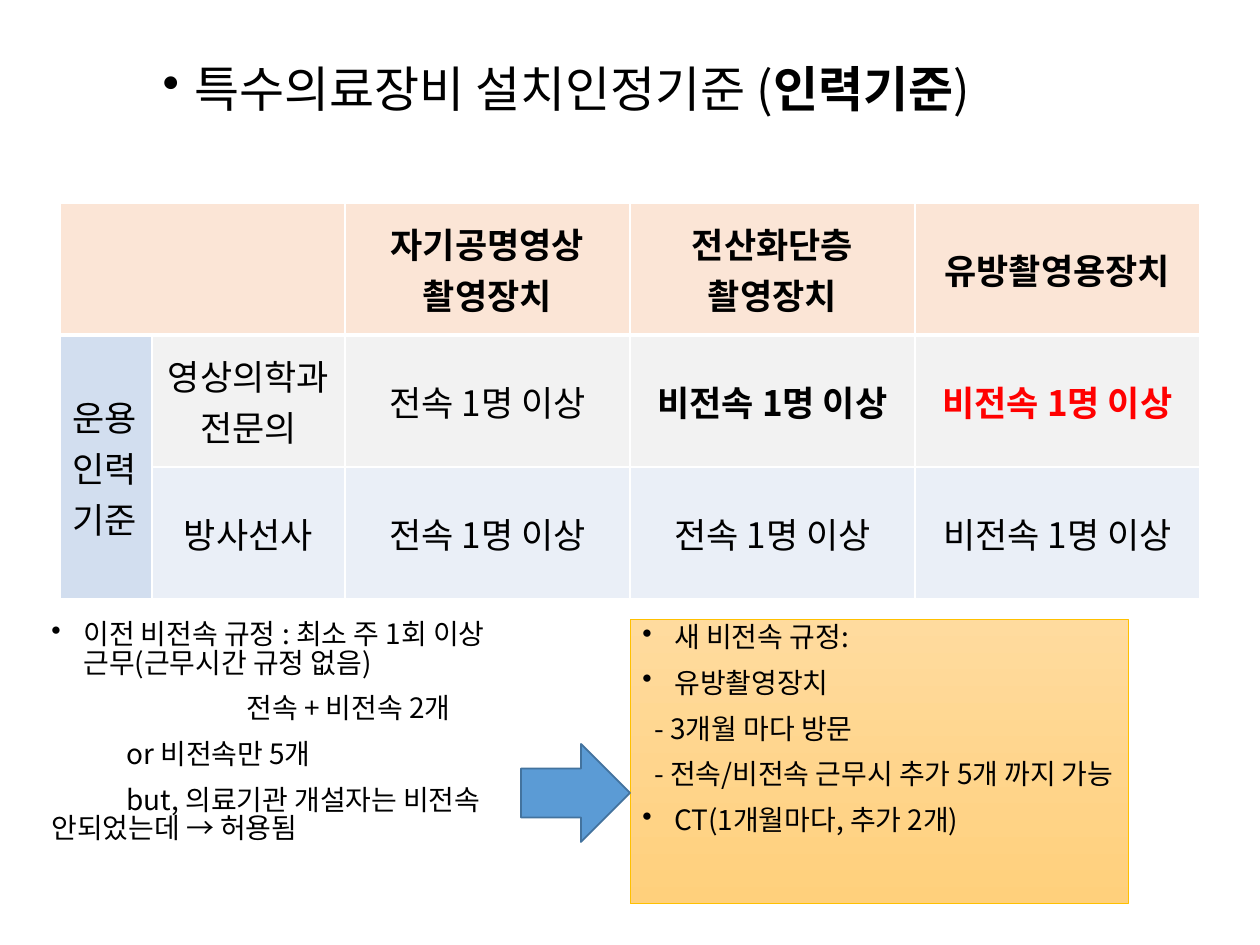
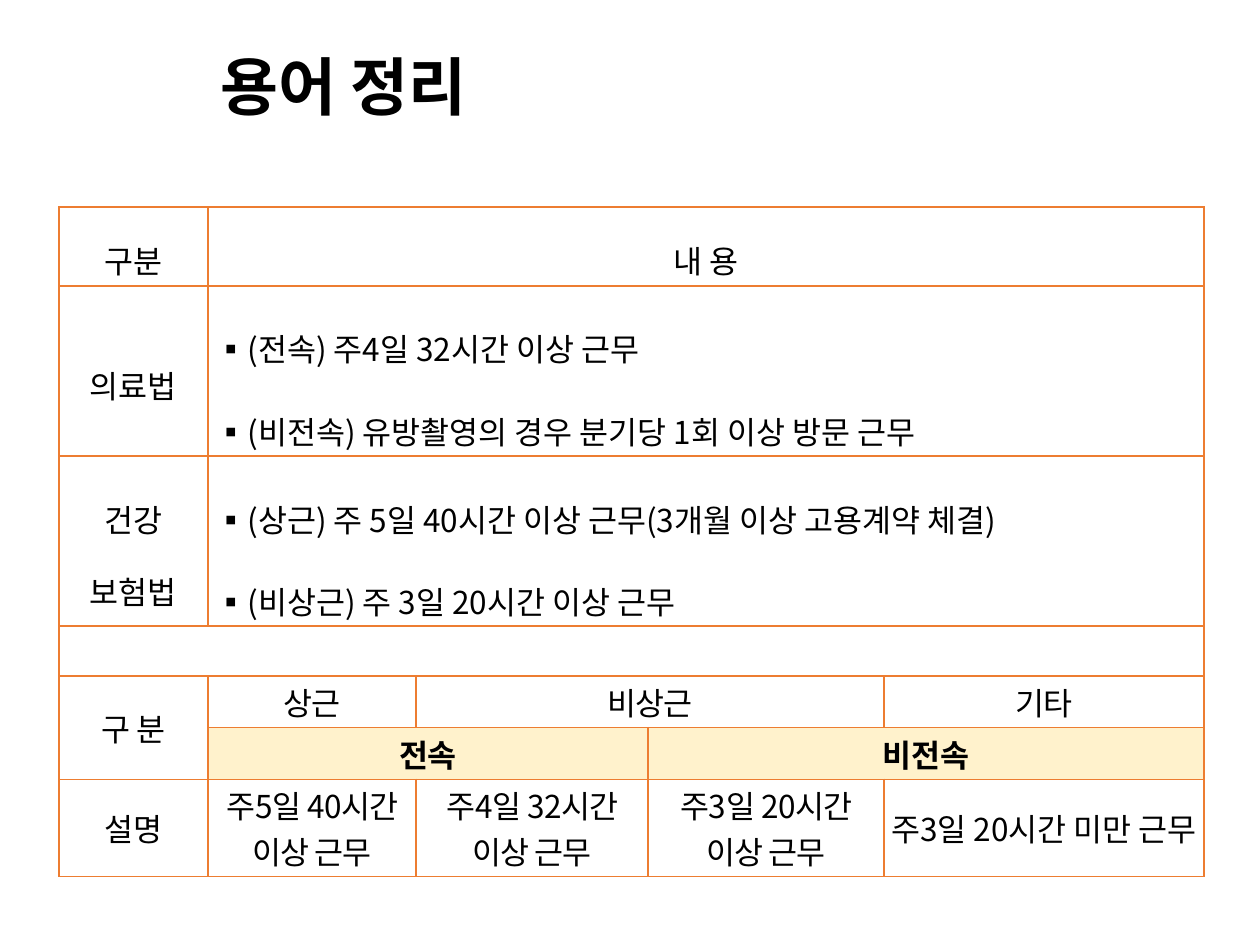
from pptx import Presentation
from pptx.dml.color import RGBColor as Rgb
from pptx.enum.shapes import MSO_SHAPE as Shape
from pptx.enum.text import MSO_ANCHOR as Anchor, PP_ALIGN as Align
from pptx.oxml.ns import qn
from pptx.util import Pt
from lxml.etree import SubElement as Sub

FONT = "Noto Sans CJK KR"
HEX = {
    "ink": "000000", "red": "FF0000", "white": "FFFFFF",
    "peach": "FBE5D6", "steel": "D2DEEF", "grey": "F2F2F2", "ice": "EAEFF7",
    "orange": "ED7D31", "cream": "FFF2CC", "gold": "FFC000",
    "light": "FFDB9E", "deep": "FFD07C", "blue": "5B9BD5", "navy": "43739E",
}
FACE = {"size": 18, "bold": False, "color": "ink", "track": 0}
PARA = {"alignment": Align.LEFT, "line_spacing": 1.0}


def px(n):
    return round(n * 914400 / 126)


def rgb(name):
    return Rgb.from_string(HEX[name])


def put(obj, vals):
    for key, val in vals.items():
        setattr(obj, key, val)


def place(obj, box):
    put(obj, dict(zip(("left", "top", "width", "height"), map(px, box))))


def add_run(para, text, face):
    face = {**FACE, **face}
    run = para.add_run()
    run.text = text
    put(run.font, {"name": FONT, "size": Pt(face["size"]), "bold": face["bold"]})
    run.font.color.rgb = rgb(face["color"])
    props = run.font._element
    Sub(props, qn("a:ea")).set("typeface", FONT)
    if face["track"]:
        props.set("spc", str(face["track"]))


def indent(para, left, first, mark=None):
    props = para._p.get_or_add_pPr()
    props.set("marL", str(px(left)))
    props.set("indent", str(px(first)))
    if mark:
        Sub(props, qn("a:buChar")).set("char", mark)


def write(frame, lines, face, fmt=None, gap=0):
    for i, (text, lead) in enumerate(lines):
        para = frame.paragraphs[0] if i == 0 else frame.add_paragraph()
        if lead == "•":
            indent(para, 32, -32, lead)
        elif lead:
            indent(para, 0, lead)
        put(para, {**PARA, **(fmt or {})})
        if i and gap:
            para.space_before = Pt(gap)
        parts = [(text, {})] if isinstance(text, str) else text
        for part, more in parts:
            add_run(para, part, {**face, **more})


def add_title(slide, box, text, face, lead=None):
    title = slide.shapes.title
    place(title, box)
    put(title.text_frame, {"vertical_anchor": Anchor.MIDDLE, "word_wrap": True})
    write(title.text_frame, [(text, lead)], face, {"line_spacing": 0.9})


def add_grid(slide, left, top, cols, rows):
    box = map(px, (left, top, sum(cols), sum(rows)))
    table = slide.shapes.add_table(len(rows), len(cols), *box).table
    put(table, {"first_row": False, "horz_banding": False})
    for col, wide in zip(table.columns, cols):
        col.width = px(wide)
    for row, high in zip(table.rows, rows):
        row.height = px(high)
    return table


def edge(cell, color, wide):
    props = cell._tc.get_or_add_tcPr()
    for side, pts in zip("LRTB", wide):
        line = Sub(props, qn("a:ln" + side), w=str(Pt(pts)))
        Sub(Sub(line, qn("a:solidFill")), qn("a:srgbClr")).set("val", HEX[color])


def paint(cell, name):
    if name:
        cell.fill.solid()
        cell.fill.fore_color.rgb = rgb(name)
    else:
        cell.fill.background()


def pad(cell, wide, high):
    put(cell, {"margin_left": px(wide), "margin_right": px(wide),
               "margin_top": px(high), "margin_bottom": px(high)})


def fill_cell(cell, text, face, fmt):
    cell.vertical_anchor = Anchor.MIDDLE
    if text:
        write(cell.text_frame, [(line, None) for line in text.split("\n")], face, fmt)


def add_staff(slide, left, top):
    full, part = "전속 1명 이상", "비전속 1명 이상"
    words = [
        ["", "", "자기공명영상\n촬영장치", "전산화단층\n촬영장치", "유방촬영용장치"],
        ["운용인력기준", "영상의학과전문의", full, part, part],
        ["", "방사선사", full, full, part],
    ]
    marks = {(1, 3): {"bold": True}, (1, 4): {"bold": True, "color": "red"}}
    table = add_grid(slide, left, top, [92, 193] + [285] * 3, [132] * 3)
    for r, (row, tint) in enumerate(zip(words, ("peach", "grey", "ice"))):
        for c, text in enumerate(row):
            cell = table.cell(r, c)
            side = r and c == 0
            edge(cell, "white", (1, 1, 3 if r == 1 else 1, 1 if r else 3))
            paint(cell, "steel" if side else tint)
            face = {"size": 20, "bold": r == 0, **marks.get((r, c), {})}
            fill_cell(cell, text, face, {"alignment": Align.LEFT if side else Align.CENTER})
    table.cell(0, 0).merge(table.cell(0, 1))
    table.cell(1, 0).merge(table.cell(2, 0))


def add_note(shape, lines):
    put(shape.text_frame, {"word_wrap": True, "vertical_anchor": Anchor.TOP})
    write(shape.text_frame, lines, {"size": 16}, {"line_spacing": 0.84}, 10)


def add_rules(slide, left, top):
    old = slide.shapes.add_textbox(*map(px, (left, top, 498, 268)))
    add_note(old, [
        ("이전 비전속 규정 : 최소 주 1회 이상 근무(근무시간 규정 없음)", "•"),
        ("전속 + 비전속 2개", 195),
        ("or 비전속만 5개", 75),
        ("but, 의료기관 개설자는 비전속 안되었는데 → 허용됨", 75),
    ])
    new = slide.shapes.add_shape(Shape.RECTANGLE, *map(px, (left + 591, top + 3, 498, 285)))
    new.fill.gradient()
    new.fill.gradient_angle = 270
    for stop, name in zip(new.fill.gradient_stops, ("light", "deep")):
        stop.color.rgb = rgb(name)
    add_note(new, [
        ("새 비전속 규정:", "•"),
        ("유방촬영장치", "•"),
        ("- 3개월 마다 방문", 12),
        ("- 전속/비전속 근무시 추가 5개 까지 가능", 12),
        ("CT(1개월마다, 추가 2개)", "•"),
    ])
    arrow = slide.shapes.add_shape(Shape.RIGHT_ARROW, *map(px, (left + 482, top + 128, 109, 98)))
    paint(arrow, "blue")
    for shape, name, wide in ((new, "gold", 0.5), (arrow, "navy", 1)):
        shape.shadow.inherit = False
        shape.line.color.rgb = rgb(name)
        shape.line.width = Pt(wide)


def add_terms(slide, left, top):
    law = {
        (0, 0): "구분", (0, 1): "내 용",
        (1, 0): "의료법",
        (1, 1): "▪(전속) 주4일 32시간 이상 근무\n▪(비전속) 유방촬영의 경우 분기당 1회 이상 방문 근무",
        (2, 0): "건강\n보험법",
        (2, 1): "▪(상근) 주 5일 40시간 이상 근무(3개월 이상 고용계약 체결)\n▪(비상근) 주 3일 20시간 이상 근무",
    }
    kinds = {
        (4, 0): "구 분", (4, 1): "상근", (4, 2): "비상근", (4, 4): "기타",
        (5, 1): "전속", (5, 3): "비전속",
        (6, 0): "설명", (6, 1): "주5일 40시간 이상 근무", (6, 2): "주4일 32시간 이상 근무",
        (6, 3): "주3일 20시간 이상 근무", (6, 4): "주3일 20시간 미만 근무",
    }
    words = {**law, **kinds}
    spans = [(0, 1, 0, 4), (1, 1, 1, 4), (2, 1, 2, 4), (3, 0, 3, 4),
             (4, 0, 5, 0), (4, 2, 4, 3), (5, 1, 5, 2), (5, 3, 5, 4)]
    rows = [77, 168, 168, 50, 50, 50, 95]
    table = add_grid(slide, left, top, [149, 208, 232, 236, 320], rows)
    for r in range(len(rows)):
        for c in range(5):
            cell = table.cell(r, c)
            band = r == 5 and c > 0
            edge(cell, "orange", (1, 1, 1, 1))
            paint(cell, "cream" if band else None)
            pad(cell, 8 if r < 3 else 3, 3)
            body = r in (1, 2) and c == 1
            fmt = {"alignment": Align.JUSTIFY if body else Align.CENTER,
                   "line_spacing": 1.8 if body else 1.6 if r < 3 else 1.0}
            loose = r < 3 or (r, c) in ((5, 3), (6, 4))
            face = {"bold": band, "track": 0 if loose else -50}
            fill_cell(cell, words.get((r, c)), face, fmt)
    for r, c, end, last in spans:
        table.cell(r, c).merge(table.cell(end, last))


def main():
    deck = Presentation()
    put(deck, {"slide_width": px(1260), "slide_height": px(945)})
    staff, terms = (deck.slides.add_slide(deck.slide_layouts[5]) for _ in range(2))
    name = [("특수의료장비 설치인정기준 (", {}), ("인력기준", {"bold": True}), (")", {})]
    add_title(staff, (150, 62, 1086, 59), name, {"size": 28}, "•")
    add_staff(staff, 60, 203)
    add_rules(staff, 39, 616)
    add_title(terms, (208, 42, 975, 97), "용어 정리", {"size": 36, "bold": True})
    add_terms(terms, 59, 207)
    deck.save("out.pptx")


if __name__ == "__main__":
    main()
